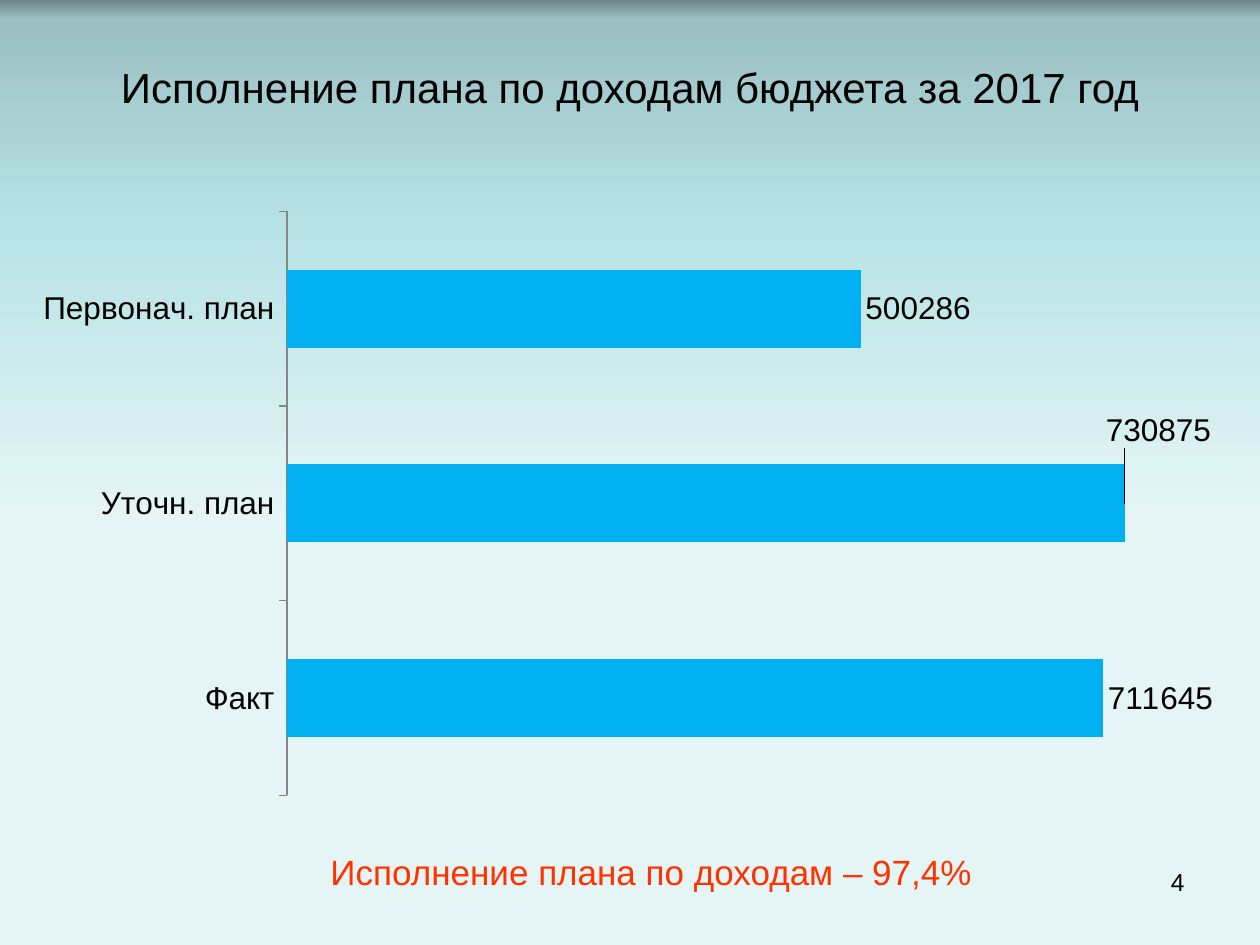
from dataclasses import dataclass

from lxml.etree import SubElement
from pptx import Presentation
from pptx.chart.data import CategoryChartData
from pptx.dml.color import RGBColor
from pptx.enum.chart import XL_CHART_TYPE as ChartType, XL_LABEL_POSITION as LabelPosition
from pptx.enum.chart import XL_TICK_MARK as TickMark
from pptx.enum.text import MSO_ANCHOR as Anchor, PP_ALIGN as Align
from pptx.oxml import parse_xml
from pptx.oxml.ns import nsdecls, qn
from pptx.util import Pt

FONT = "Arial"
BLACK = "000000"
BACKGROUND_STOPS = [(0, "6D8688"), (2, "9BBFC2"), (24, "B8E3E6"), (55, "E5F5F6")]
INCOME = {"Факт": 711645, "Уточн. план": 730875, "Первонач. план": 500286}
PLOT_AREA = {"x": 0.22, "y": 0.02, "w": 0.76, "h": 0.96}
RAISED_LABEL = {"x": -0.02, "y": -0.12}


@dataclass
class Caption:
    text: str
    left: float
    top: float
    width: float
    height: float
    size: int
    color: str = BLACK
    align: Align = Align.CENTER
    anchor: Anchor = Anchor.MIDDLE


CAPTIONS = [
    Caption("Исполнение плана по доходам бюджета за 2017 год", 36, 21.6, 648, 56.2, 24),
    Caption("4", 516.2, 491.8, 167.8, 37.4, 14, align=Align.RIGHT, anchor=Anchor.TOP),
    Caption("Исполнение плана по доходам – 97,4%", 156.2, 486, 432, 23.8, 20, "FF3300"),
]


def rgb(value: str) -> RGBColor:
    return RGBColor.from_string(value)


def apply(target, formats: dict) -> None:
    for name, value in formats.items():
        setattr(target, name, value)


def style_font(font, size: int, color: str = BLACK) -> None:
    apply(font, {"name": FONT, "size": Pt(size), "bold": False})
    font.color.rgb = rgb(color)


def paint_background(page) -> None:
    fill = page.background.fill
    fill.gradient()
    fill.gradient_angle = 270
    stops = page.element.find(".//" + qn("a:gsLst"))
    for stop in list(stops):
        stops.remove(stop)
    for position, color in BACKGROUND_STOPS:
        stop = SubElement(stops, qn("a:gs"), pos=str(position * 1000))
        SubElement(stop, qn("a:srgbClr"), val=color)


def add_caption(page, caption: Caption) -> None:
    box = page.shapes.add_textbox(
        Pt(caption.left), Pt(caption.top), Pt(caption.width), Pt(caption.height))
    apply(box.text_frame, {"word_wrap": True, "vertical_anchor": caption.anchor})
    para = box.text_frame.paragraphs[0]
    para.alignment = caption.align
    span = para.add_run()
    span.text = caption.text
    style_font(span.font, caption.size, caption.color)


def manual_layout(values: dict, inner: bool = False):
    target = '<c:layoutTarget val="inner"/>' if inner else ""
    modes = '<c:xMode val="edge"/><c:yMode val="edge"/>' if inner else ""
    sizes = "".join(f'<c:{name} val="{value}"/>' for name, value in values.items())
    return parse_xml(f'<c:layout {nsdecls("c")}><c:manualLayout>'
                     f'{target}{modes}{sizes}</c:manualLayout></c:layout>')


def add_income_chart(page) -> None:
    data = CategoryChartData()
    data.categories = list(INCOME)
    data.add_series("Series 1", list(INCOME.values()))
    chart = page.shapes.add_chart(
        ChartType.BAR_CLUSTERED, Pt(12.2), Pt(113.8), Pt(689.8), Pt(347.8), data).chart
    apply(chart, {"has_legend": False, "has_title": False})
    style_font(chart.font, 18)

    apply(chart.value_axis, {"visible": False, "has_major_gridlines": False,
                             "minimum_scale": 0, "maximum_scale": 800000})
    apply(chart.category_axis, {"major_tick_mark": TickMark.OUTSIDE,
                                "minor_tick_mark": TickMark.NONE})
    line = chart.category_axis.format.line
    line.width = Pt(0.75)
    line.color.rgb = rgb("868686")

    plot = chart.plots[0]
    apply(plot, {"gap_width": 150, "vary_by_categories": False})
    series = plot.series[0]
    series.format.fill.solid()
    series.format.fill.fore_color.rgb = rgb("00B0F0")
    apply(series.data_labels, {"show_value": True, "position": LabelPosition.OUTSIDE_END})
    style_font(series.data_labels.font, 18)
    raised = series.points[1].data_label
    style_font(raised.font, 18)
    raised.position = LabelPosition.OUTSIDE_END

    label_index = chart.element.find(".//" + qn("c:dLbl") + "/" + qn("c:idx"))
    label_index.addnext(manual_layout(RAISED_LABEL))
    plot_area = chart.element.find(".//" + qn("c:plotArea"))
    for layout in plot_area.findall(qn("c:layout")):
        plot_area.remove(layout)
    plot_area.insert(0, manual_layout(PLOT_AREA, inner=True))


def main() -> None:
    deck = Presentation()
    apply(deck, {"slide_width": Pt(720), "slide_height": Pt(540)})
    page = deck.slides.add_slide(deck.slide_layouts[6])
    paint_background(page)
    add_income_chart(page)
    for caption in CAPTIONS:
        add_caption(page, caption)
    deck.save("out.pptx")


if __name__ == "__main__":
    main()
